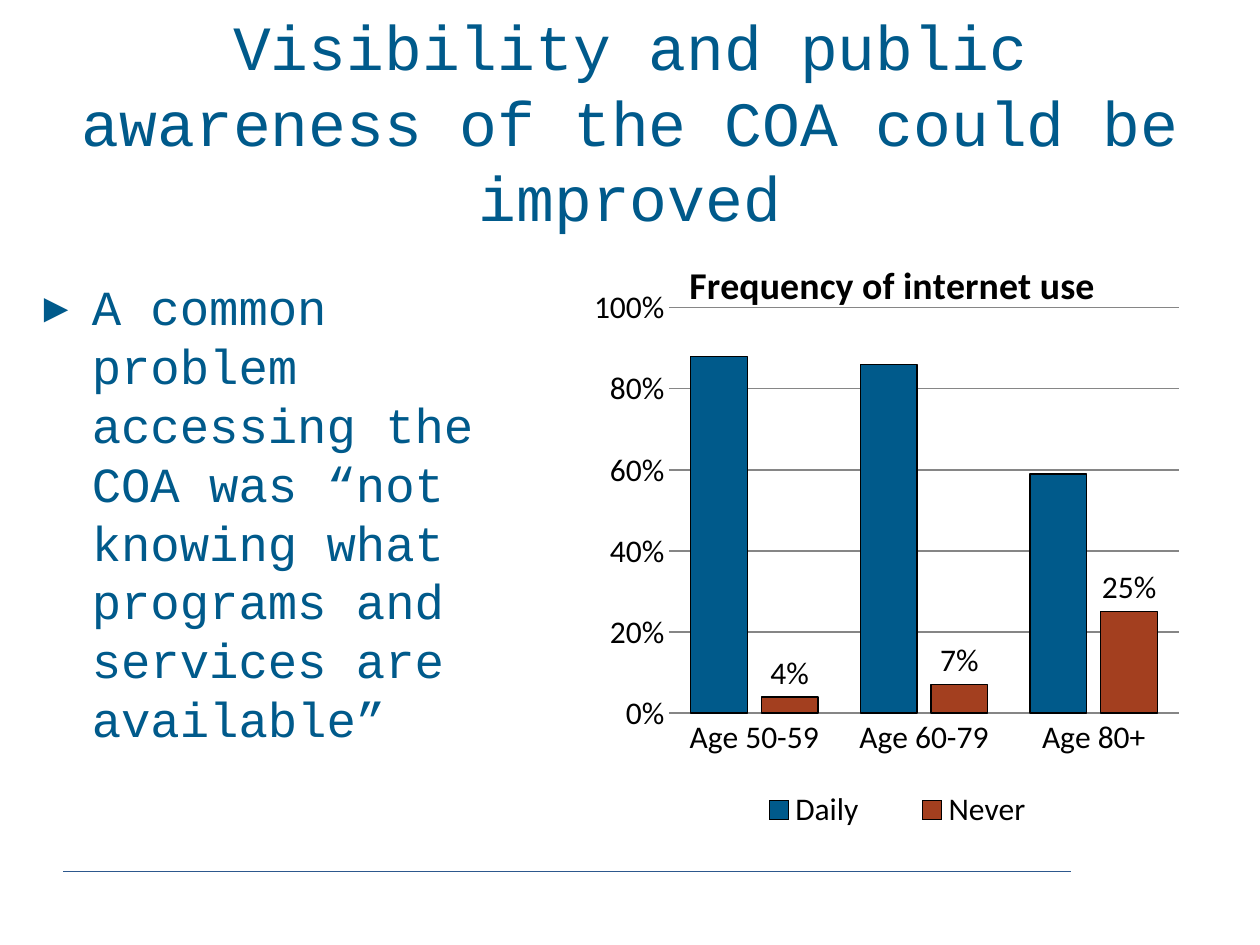
from lxml import etree
from pptx import Presentation
from pptx.chart.data import CategoryChartData
from pptx.dml.color import RGBColor
from pptx.enum.chart import XL_CHART_TYPE, XL_LABEL_POSITION, XL_LEGEND_POSITION, XL_TICK_MARK
from pptx.enum.shapes import MSO_CONNECTOR
from pptx.enum.text import MSO_ANCHOR, PP_ALIGN
from pptx.oxml.ns import qn
from pptx.util import Inches, Pt

CLUSTERED = XL_CHART_TYPE.COLUMN_CLUSTERED
OUTSIDE_END = XL_LABEL_POSITION.OUTSIDE_END
LEGEND_BOTTOM = XL_LEGEND_POSITION.BOTTOM
NO_TICKS = XL_TICK_MARK.NONE
STRAIGHT = MSO_CONNECTOR.STRAIGHT
MIDDLE = MSO_ANCHOR.MIDDLE
LEFT, CENTER = PP_ALIGN.LEFT, PP_ALIGN.CENTER

# Content
COLORS = {"blue": "005A8B", "rust": "A33F1F", "rule": "2D588D",
          "grid": "868686", "black": "000000"}
TITLE = "Visibility and public awareness of the COA could be improved"
BODY = ("A common problem accessing the COA was “not knowing what "
        "programs and services are available”")
CHART_TITLE = "Frequency of internet use"
AGE_GROUPS = ["Age 50-59", "Age 60-79", "Age 80+"]
SERIES = [  # name, values, colour, labelled
    ("Daily", [0.88, 0.86, 0.59], "blue", False),
    ("Never", [0.04, 0.07, 0.25], "rust", True),
]


def color(name):
    return RGBColor.from_string(COLORS[name])


def set_font(font, size, name="Calibri", color_name="black", bold=False):
    font.size, font.name, font.bold = Pt(size), name, bold
    font.color.rgb = color(color_name)


def add_text(slide, text, box, size, align=LEFT, bullet=None, indent=0, bottom=0.05):
    frame = slide.shapes.add_textbox(*map(Inches, box)).text_frame
    frame.word_wrap = True
    frame.vertical_anchor = MIDDLE
    frame.margin_bottom = Inches(bottom)
    paragraph = frame.paragraphs[0]
    paragraph.alignment = align
    if bullet:
        properties = paragraph._p.get_or_add_pPr()
        properties.set("marL", str(Inches(indent)))
        properties.set("indent", str(-Inches(indent)))
        bullet_color = etree.SubElement(properties, qn("a:buClr"))
        etree.SubElement(bullet_color, qn("a:srgbClr"), val=COLORS["blue"])
        etree.SubElement(properties, qn("a:buFont"), typeface="Arial")
        etree.SubElement(properties, qn("a:buChar"), char=bullet)
    run = paragraph.add_run()
    run.text = text
    set_font(run.font, size, "Courier New", "blue")


def place(parent, after, target=None, **fractions):
    """Give a chart part a manual layout, in fractions of the chart."""
    for old in parent.findall(qn("c:layout")):
        parent.remove(old)
    layout = etree.Element(qn("c:layout"))
    manual = etree.SubElement(layout, qn("c:manualLayout"))
    if target:
        etree.SubElement(manual, qn("c:layoutTarget"), val=target)
    for key in ("x", "y"):
        etree.SubElement(manual, qn(f"c:{key}Mode"), val="edge")
    for key, value in fractions.items():
        etree.SubElement(manual, qn(f"c:{key}"), val=str(value))
    if after:
        parent.find(qn(after)).addnext(layout)
    else:
        parent.insert(0, layout)


def add_usage_chart(slide, box):
    data = CategoryChartData(number_format="0%")
    data.categories = AGE_GROUPS
    for name, values, _, _ in SERIES:
        data.add_series(name, values)
    chart = slide.shapes.add_chart(CLUSTERED, *map(Inches, box), data).chart
    set_font(chart.font, 18)

    # Title and legend
    title = chart.chart_title
    title.text_frame.text = CHART_TITLE
    set_font(title.text_frame.paragraphs[0].runs[0].font, 21.6, bold=True)
    place(title._element, "c:tx", x=0.19, y=0.05)
    chart.has_legend = True
    chart.legend.position = LEGEND_BOTTOM
    chart.legend.include_in_layout = False
    place(chart.legend._element, "c:legendPos", x=0.24, y=0.9, w=0.55, h=0.09)

    # Axes
    for axis in (chart.category_axis, chart.value_axis):
        axis.major_tick_mark = axis.minor_tick_mark = NO_TICKS
    chart.category_axis.format.line.color.rgb = color("grid")
    value_axis = chart.value_axis
    value_axis.minimum_scale, value_axis.maximum_scale = 0, 1
    value_axis.major_unit = 0.2
    value_axis.format.line.fill.background()
    value_axis.major_gridlines.format.line.color.rgb = color("grid")
    value_axis.tick_labels.number_format = "0%"
    value_axis.tick_labels.number_format_is_linked = False

    # Columns
    plot = chart.plots[0]
    plot.gap_width, plot.overlap, plot.vary_by_categories = 75, -25, False
    plot_area = chart._chartSpace.chart.plotArea
    place(plot_area, None, target="inner", x=0.17, y=0.14, w=0.77, h=0.65)
    for series, (_, _, fill, labelled) in zip(plot.series, SERIES):
        series.format.fill.solid()
        series.format.fill.fore_color.rgb = color(fill)
        series.format.line.color.rgb = color("black")
        series.format.line.width = Pt(0.75)
        if labelled:
            labels = series.data_labels
            labels.show_value = True
            labels.number_format = "0%"
            labels.number_format_is_linked = False
            labels.position = OUTSIDE_END
            set_font(labels.font, 18)


def main():
    presentation = Presentation()
    presentation.slide_width, presentation.slide_height = Inches(10), Inches(7.5)
    slide = presentation.slides.add_slide(presentation.slide_layouts[6])

    # Footer rule
    rule = slide.shapes.add_connector(
        STRAIGHT, Inches(0.5), Inches(6.92), Inches(8.5), Inches(6.92))
    rule.line.color.rgb = color("rule")
    rule.line.width = Pt(0.5)
    etree.SubElement(rule._element.spPr, qn("a:effectLst"))

    # Title, chart and finding
    add_text(slide, TITLE, (0.5, 0.17, 9, 1.58), 36, align=CENTER)
    add_usage_chart(slide, (4.42, 1.75, 5.25, 4.95))
    add_text(slide, BODY, (0.25, 1.75, 3.92, 5.08), 28,
             bullet="▸", indent=0.38, bottom=0.5)

    presentation.save("out.pptx")


if __name__ == "__main__":
    main()
